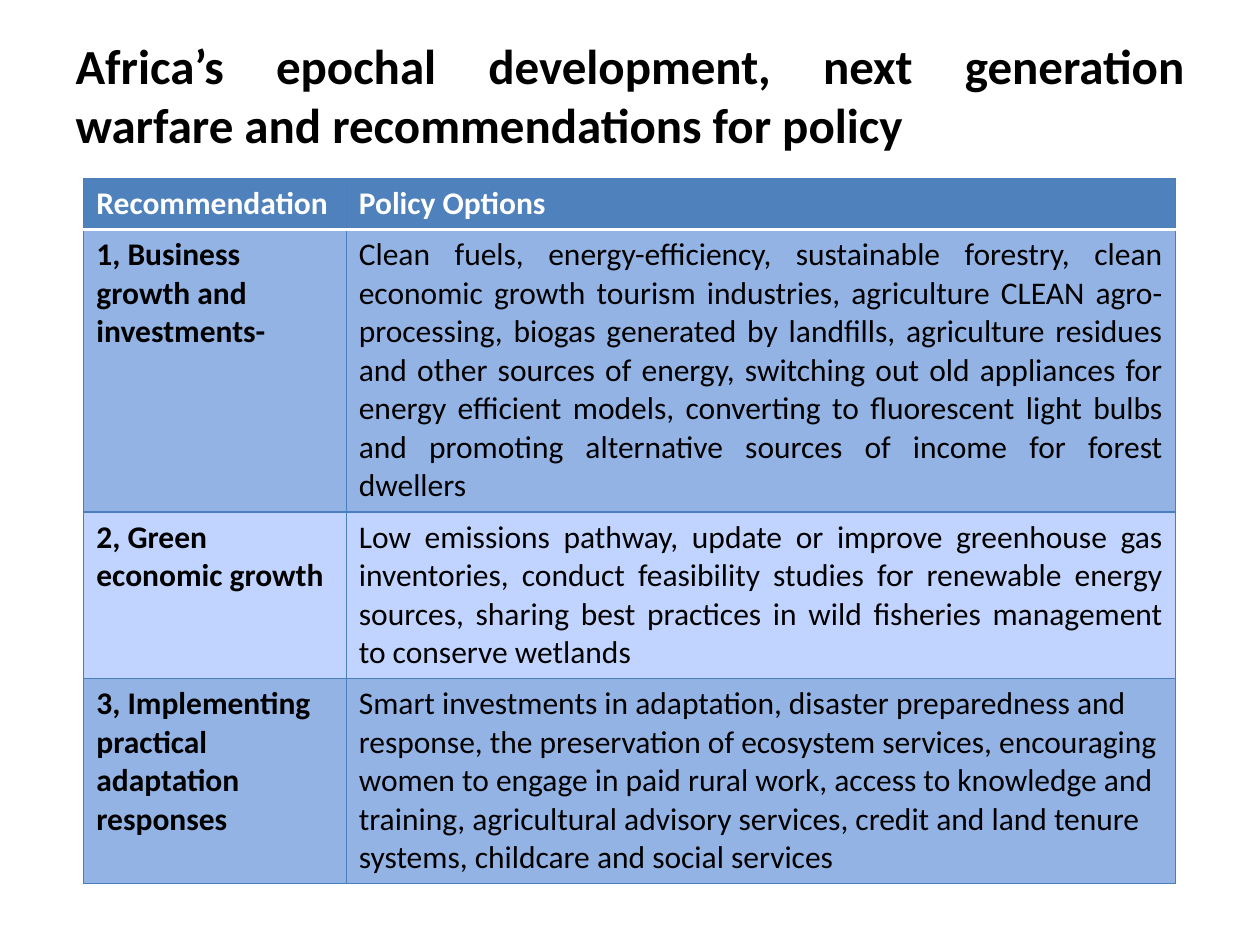
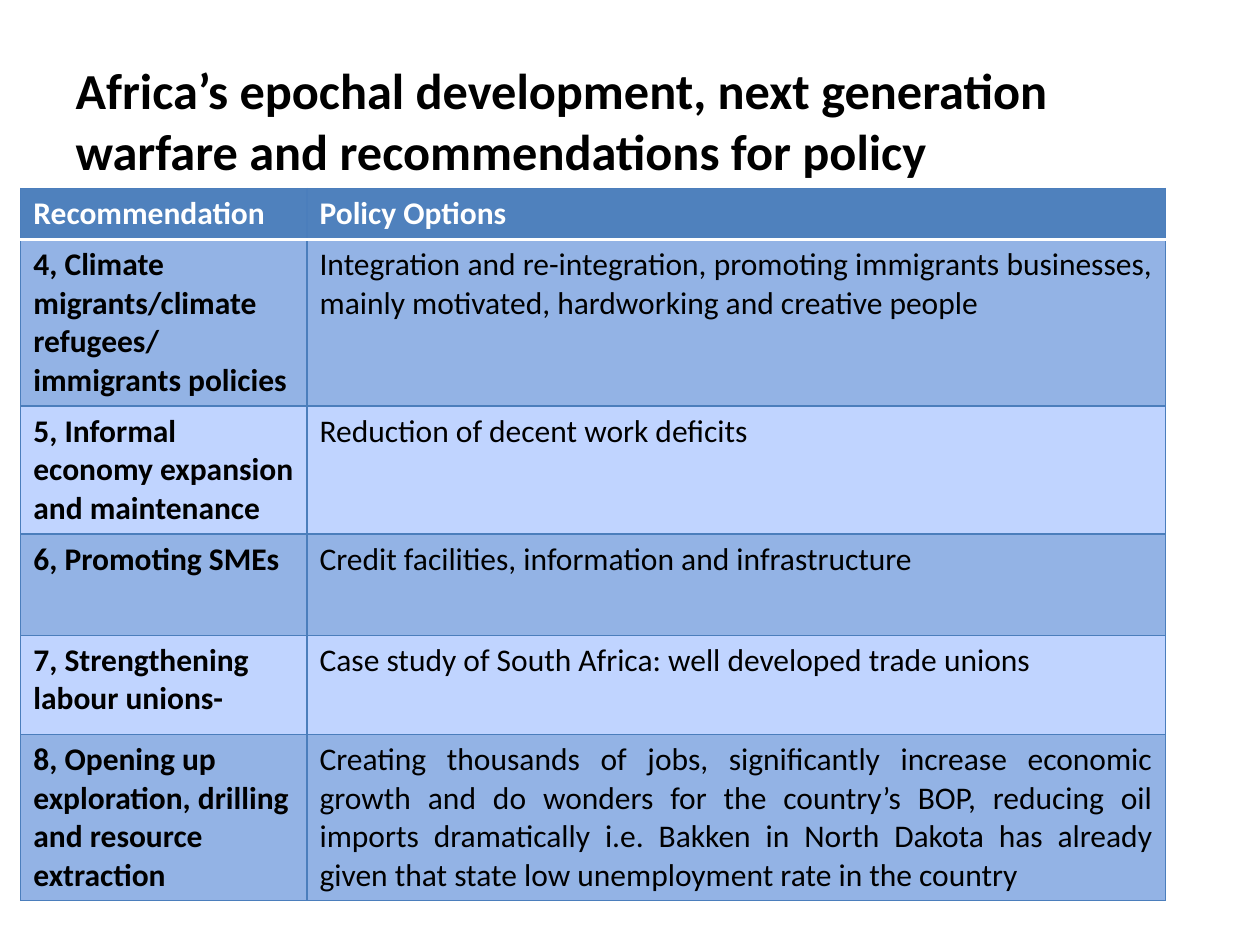
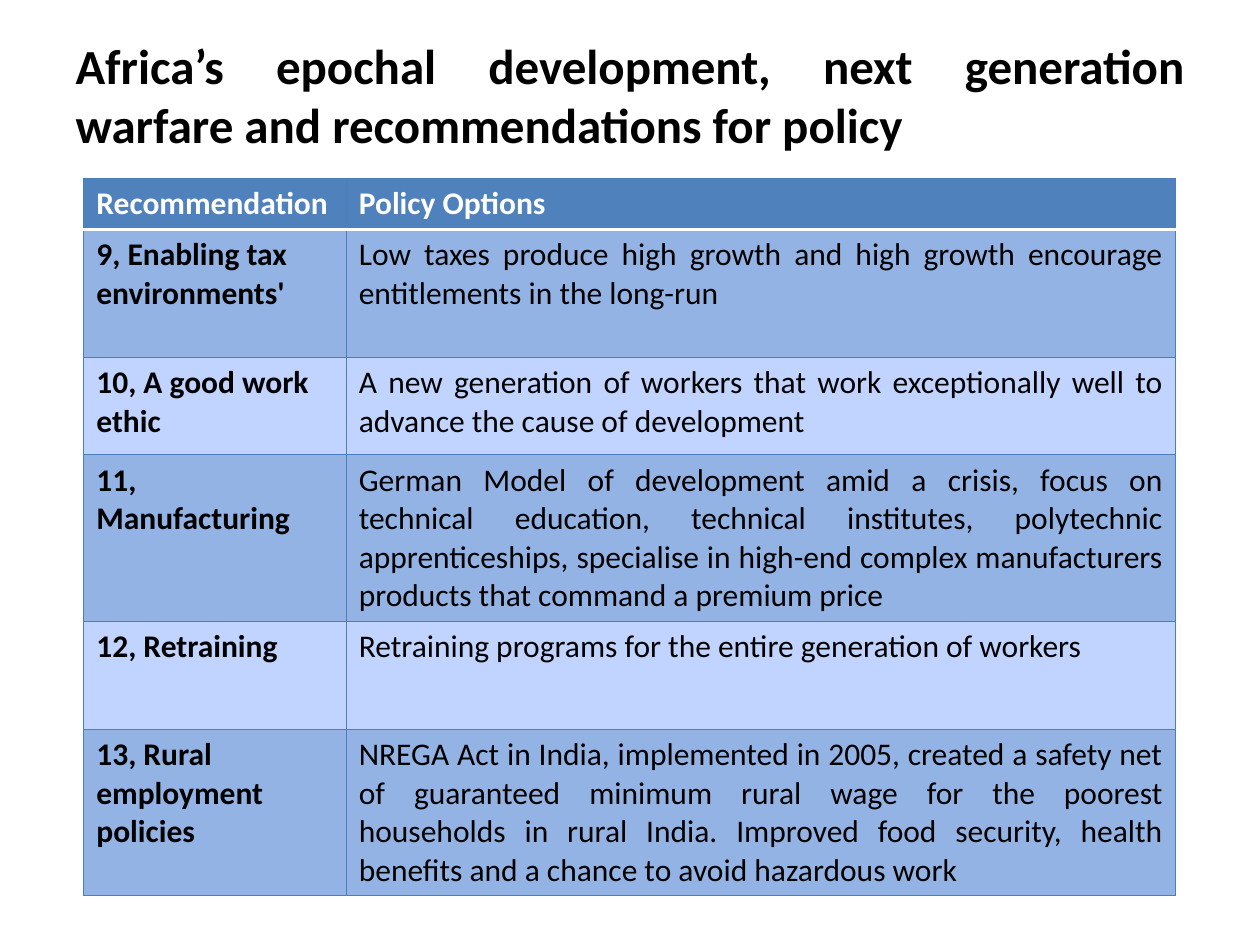
from lxml.etree import SubElement
from pptx import Presentation
from pptx.dml.color import RGBColor
from pptx.enum.text import MSO_ANCHOR, MSO_AUTO_SIZE, PP_ALIGN
from pptx.oxml.ns import qn
from pptx.util import Cm, Pt

FONT = "Calibri"
BLACK, WHITE = "000000", "FFFFFF"
HEADER_FILL, BORDER = "4F81BD", "4B7EBC"
BAND_FILLS = ("93B3E5", "C0D4FF")
LEFT, JUSTIFY = PP_ALIGN.LEFT, PP_ALIGN.JUSTIFY

TITLE = ("Africa’s epochal development, next generation warfare "
         "and recommendations for policy")
HEADINGS = ("Recommendation", "Policy Options")
HEADER_HEIGHT = 1.03

# Lengths are in centimetres
STANDARD = {
    "title_box": (1.27, 0.64, 22.86, 2.54),
    "title_format": {"size": Pt(28)},
    "title_frame": {"vertical_anchor": MSO_ANCHOR.MIDDLE},
    "title_alignment": JUSTIFY,
    "table_corner": (1.69, 3.6),
    "columns": (5.29, 16.72),
}
WIDE = {
    "title_box": (1.27, 0, 22.86, 3.18),
    "title_format": {"size": Pt(28.8)},
    "title_frame": {"vertical_anchor": MSO_ANCHOR.TOP, "margin_top": Cm(1.2)},
    "title_alignment": LEFT,
    "table_corner": (0.42, 3.8),
    "columns": (5.77, 17.3),
}

# Each row: height, recommendation, policy options, alignment of the options
SLIDES = [
    (STANDARD, [
        (5.69, "1, Business growth and investments-",
         "Clean fuels, energy-efficiency, sustainable forestry, clean economic "
         "growth tourism industries, agriculture CLEAN agro-processing, biogas "
         "generated by landfills, agriculture residues and other sources of "
         "energy, switching out old appliances for energy efficient models, "
         "converting to fluorescent light bulbs and promoting alternative "
         "sources of income for forest dwellers", JUSTIFY),
        (3.35, "2, Green economic growth",
         "Low emissions pathway, update or improve greenhouse gas inventories, "
         "conduct feasibility studies for renewable energy sources, sharing "
         "best practices in wild fisheries management to conserve wetlands",
         JUSTIFY),
        (4.14, "3, Implementing practical adaptation responses",
         "Smart investments in adaptation, disaster preparedness and response, "
         "the preservation of ecosystem services, encouraging women to engage "
         "in paid rural work, access to knowledge and training, agricultural "
         "advisory services, credit and land tenure systems, childcare and "
         "social services", LEFT),
    ]),
    (WIDE, [
        (3.35, "4, Climate migrants/climate refugees/ immigrants policies",
         "Integration and re-integration, promoting immigrants businesses, "
         "mainly motivated, hardworking and creative people", JUSTIFY),
        (2.58, "5, Informal economy expansion and maintenance",
         "Reduction of decent work deficits", LEFT),
        (2.04, "6, Promoting SMEs",
         "Credit facilities, information and infrastructure", LEFT),
        (2.0, "7, Strengthening labour unions-",
         "Case study of South Africa: well developed trade unions", LEFT),
        (3.35, "8, Opening up exploration, drilling and resource extraction",
         "Creating thousands of jobs, significantly increase economic growth "
         "and do wonders for the country’s BOP, reducing oil imports "
         "dramatically i.e. Bakken in North Dakota has already given that "
         "state low unemployment rate in the country", JUSTIFY),
    ]),
    (STANDARD, [
        (2.58, "9, Enabling tax environments'",
         "Low taxes produce high growth and high growth encourage "
         "entitlements in the long-run", JUSTIFY),
        (1.96, "10, A good work ethic",
         "A new generation of workers that work exceptionally well to advance "
         "the cause of development", JUSTIFY),
        (3.35, "11, Manufacturing",
         "German Model of development amid a crisis, focus on technical "
         "education, technical institutes, polytechnic apprenticeships, "
         "specialise in high-end complex manufacturers products that command "
         "a premium price", JUSTIFY),
        (2.18, "12, Retraining",
         "Retraining programs for the entire generation of workers", LEFT),
        (3.35, "13, Rural employment policies",
         "NREGA Act in India, implemented in 2005, created a safety net of "
         "guaranteed minimum rural wage for the poorest households in rural "
         "India. Improved food security, health benefits and a chance to avoid "
         "hazardous work", JUSTIFY),
    ]),
]


def color(value):
    return RGBColor.from_string(value)


def set_attributes(target, values):
    for name, value in values.items():
        setattr(target, name, value)


def write(text_frame, text, alignment, font_color, **font_format):
    text_frame.text = text
    paragraph = text_frame.paragraphs[0]
    paragraph.alignment = alignment
    font = paragraph.runs[0].font
    set_attributes(font, {"name": FONT, **font_format})
    font.color.rgb = color(font_color)


def add_border(cell, side, line_color, width):
    """Draw one side of a cell: L, R, T or B."""
    line = SubElement(cell._tc.get_or_add_tcPr(), qn(f"a:ln{side}"), w=str(Pt(width)))
    fill = SubElement(line, qn("a:solidFill"))
    SubElement(fill, qn("a:srgbClr"), val=line_color)


def format_cell(cell, row_index, fill_color):
    header_side = {0: "B", 1: "T"}.get(row_index)
    for side in "LRTB":
        line = (WHITE, 2) if side == header_side else (BORDER, 0.75)
        add_border(cell, side, *line)
    cell.fill.solid()
    cell.fill.fore_color.rgb = color(fill_color)


def add_title(slide, layout):
    title = slide.shapes.title
    sides = ("left", "top", "width", "height")
    set_attributes(title, dict(zip(sides, map(Cm, layout["title_box"]))))
    write(title.text_frame, TITLE, layout["title_alignment"], BLACK,
          bold=True, **layout["title_format"])
    set_attributes(title.text_frame, {
        "word_wrap": True, "auto_size": MSO_AUTO_SIZE.NONE, **layout["title_frame"]})


def add_policy_table(slide, layout, policies):
    rows = [(HEADER_HEIGHT, *HEADINGS, LEFT), *policies]
    columns = layout["columns"]
    size = (sum(columns), sum(row[0] for row in rows))
    table = slide.shapes.add_table(
        len(rows), len(columns), *map(Cm, layout["table_corner"] + size)).table
    for column, width in zip(table.columns, columns):
        column.width = Cm(width)
    for row_index, (height, recommendation, options, alignment) in enumerate(rows):
        table.rows[row_index].height = Cm(height)
        is_header = row_index == 0
        fill_color = HEADER_FILL if is_header else BAND_FILLS[(row_index - 1) % 2]
        texts = ((recommendation, LEFT), (options, alignment))
        for column_index, (text, text_alignment) in enumerate(texts):
            cell = table.cell(row_index, column_index)
            write(cell.text_frame, text, text_alignment,
                  WHITE if is_header else BLACK,
                  size=Pt(18), bold=is_header or column_index == 0)
            format_cell(cell, row_index, fill_color)


def main():
    presentation = Presentation()
    presentation.slide_width, presentation.slide_height = Cm(25.4), Cm(19.05)
    title_only = presentation.slide_layouts.get_by_name("Title Only")
    for layout, policies in SLIDES:
        slide = presentation.slides.add_slide(title_only)
        add_title(slide, layout)
        add_policy_table(slide, layout, policies)
    presentation.save("out.pptx")


if __name__ == "__main__":
    main()
